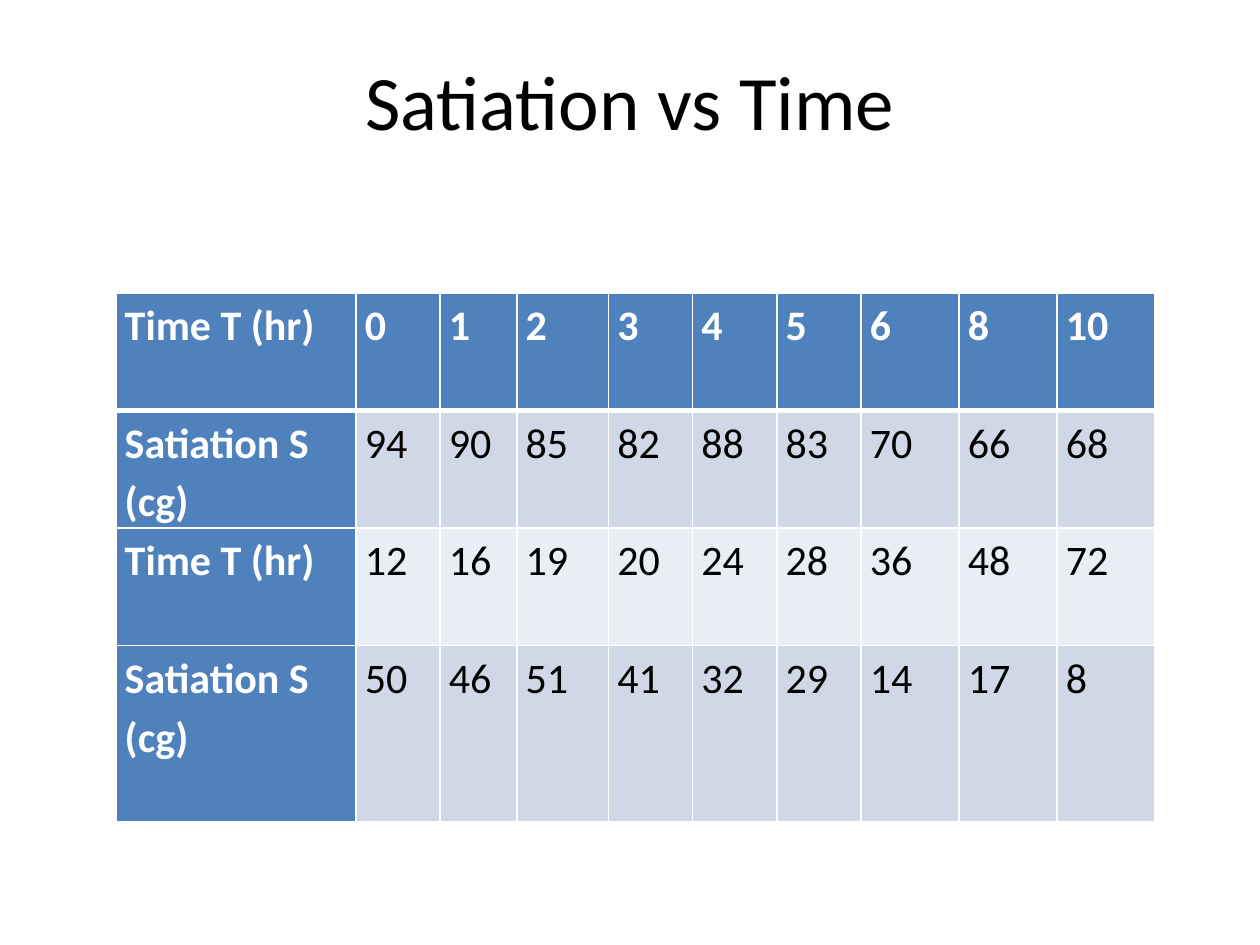
import pptx
import pptx.dml.color
import pptx.enum.text
import pptx.oxml
import pptx.oxml.ns
import pptx.util

WIDE, HIGH = pptx.util.Inches(10), pptx.util.Inches(7.5)
FONT = "Calibri"
HUES = {"ink": "000000", "white": "FFFFFF", "head": "4F81BD",
        "dark": "D0D8E8", "pale": "E9EDF4"}
TIME, FOOD = "Time T (hr)", "Satiation S (cg)"
ROWS = [
    [TIME, 0, 1, 2, 3, 4, 5, 6, 8, 10],
    [FOOD, 94, 90, 85, 82, 88, 83, 70, 66, 68],
    [TIME, 12, 16, 19, 20, 24, 28, 36, 48, 72],
    [FOOD, 50, 46, 51, 41, 32, 29, 14, 17, 8],
]
# Relative column widths and row heights
COLS = [1.91, 0.67, 0.61, 0.73, 0.67, 0.67, 0.67, 0.78, 0.78, 0.78]
LINES = [2, 2, 2, 3]


def rgb(name):
    return pptx.dml.color.RGBColor.from_string(HUES[name])


def place(left, top, width, height):
    """Turn shares of the slide into lengths."""
    return (int(left * WIDE), int(top * HIGH),
            int(width * WIDE), int(height * HIGH))


def style(para, size, hue, bold=False):
    font = para.runs[0].font
    font.name, font.size, font.bold = FONT, pptx.util.Pt(size), bold
    font.color.rgb = rgb(hue)


def add_title(slide, box, text):
    frame = slide.shapes.add_textbox(*box).text_frame
    frame.word_wrap = True
    frame.vertical_anchor = pptx.enum.text.MSO_ANCHOR.MIDDLE
    frame.text = text
    para = frame.paragraphs[0]
    para.alignment = pptx.enum.text.PP_ALIGN.CENTER
    style(para, 44, "ink")


def rule_cell(cell, widths):
    """Draw white borders; widths maps each side (L, R, T, B) to points."""
    props = cell._tc.get_or_add_tcPr()
    for spot, (side, width) in enumerate(widths.items()):
        props.insert(spot, pptx.oxml.parse_xml(
            f'<a:ln{side} {pptx.oxml.ns.nsdecls("a")} w="{pptx.util.Pt(width)}">'
            f'<a:solidFill><a:srgbClr val="{HUES["white"]}"/></a:solidFill>'
            f'</a:ln{side}>'))


def fill_cell(cell, text, row, col):
    head = row == 0 or col == 0
    cell.margin_left = cell.margin_right = pptx.util.Inches(0.07)
    cell.margin_top = cell.margin_bottom = 0
    cell.text_frame.text = str(text)
    para = cell.text_frame.paragraphs[0]
    para.line_spacing = 1.15
    style(para, 24, "white" if head else "ink", head)
    cell.fill.solid()
    cell.fill.fore_color.rgb = rgb("head" if head else "dark" if row % 2 else "pale")
    rule_cell(cell, {"L": 1, "R": 1, "T": 3 if row == 1 else 1,
                     "B": 3 if row == 0 else 1})


def add_grid(slide, box):
    table = slide.shapes.add_table(len(ROWS), len(COLS), *box).table
    for col, share in zip(table.columns, COLS):
        col.width = int(box[2] * share / sum(COLS))
    for row, share in zip(table.rows, LINES):
        row.height = int(box[3] * share / sum(LINES))
    for r, row in enumerate(ROWS):
        for c, text in enumerate(row):
            fill_cell(table.cell(r, c), text, r, c)


def main():
    deck = pptx.Presentation()
    deck.slide_width, deck.slide_height = WIDE, HIGH
    slide = deck.slides.add_slide(deck.slide_layouts[6])
    add_title(slide, place(0.05, 0.02, 0.9, 0.17), "Satiation vs Time")
    add_grid(slide, place(0.092, 0.31, 0.825, 0.56))
    deck.save("out.pptx")


if __name__ == "__main__":
    main()
